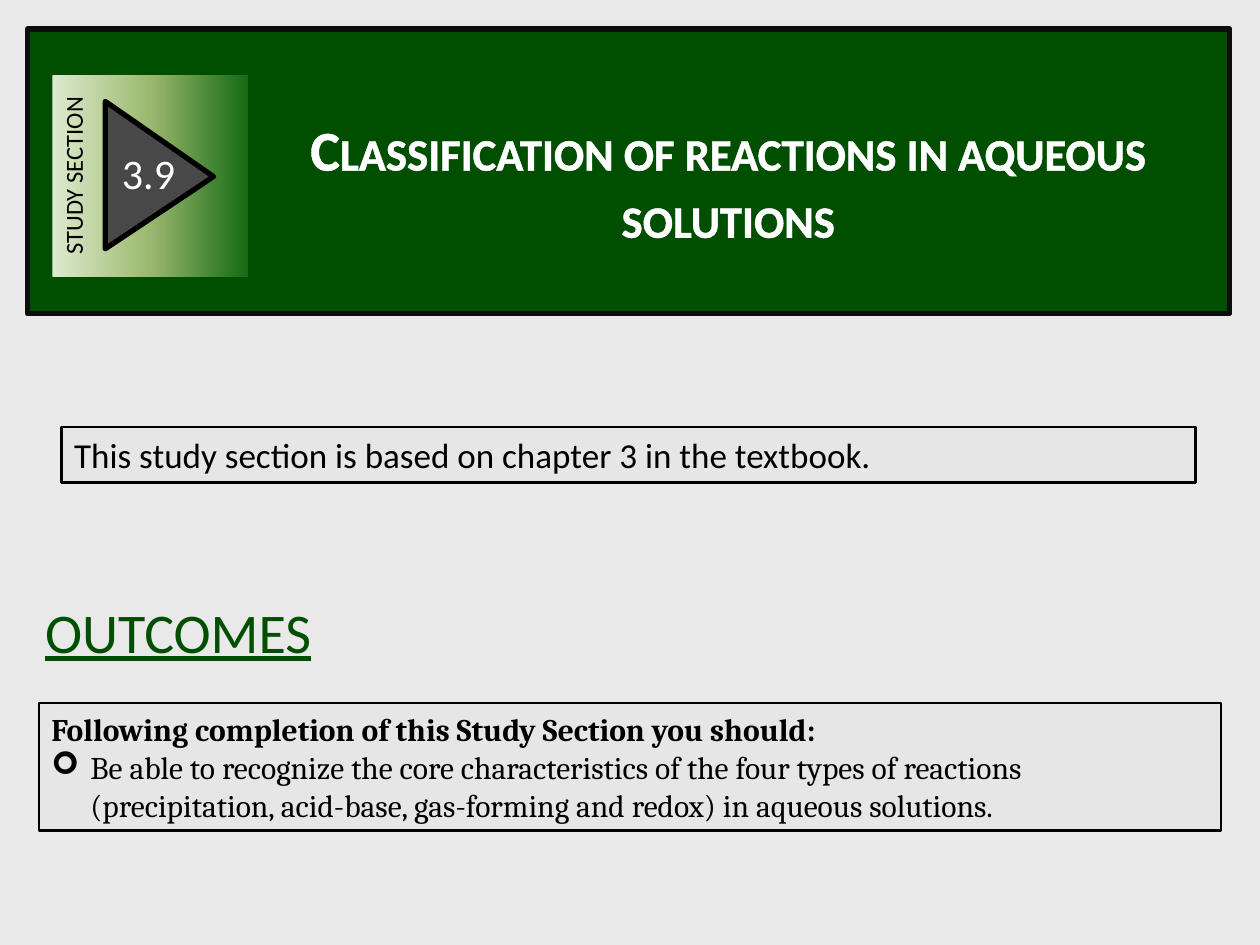
from lxml import etree
from pptx import Presentation
from pptx.dml.color import RGBColor
from pptx.enum.shapes import MSO_SHAPE
from pptx.enum.text import MSO_ANCHOR, MSO_AUTO_SIZE, PP_ALIGN
from pptx.oxml.ns import qn
from pptx.util import Inches, Pt

RECTANGLE = MSO_SHAPE.RECTANGLE
TRIANGLE = MSO_SHAPE.ISOSCELES_TRIANGLE
TOP, MIDDLE = MSO_ANCHOR.TOP, MSO_ANCHOR.MIDDLE
GROW = MSO_AUTO_SIZE.SHAPE_TO_FIT_TEXT
LEFT, CENTER = PP_ALIGN.LEFT, PP_ALIGN.CENTER

GREEN, BLACK, WHITE, PANEL = "004E00", "000000", "FFFFFF", "E6E6E6"
BADGE_STOPS = [(0, "DDEBCF"), (50, "9CB86E"), (100, "156B13")]


def color(hex_value):
    return RGBColor.from_string(hex_value)


def add_block(shapes, kind, box, fill=None, border=None, weight=0, rotation=0):
    block = shapes.add_shape(kind, *map(Inches, box))
    block.shadow.inherit = False
    block.rotation = rotation
    if fill:
        block.fill.solid()
        block.fill.fore_color.rgb = color(fill)
    if border:
        block.line.color.rgb = color(border)
        block.line.width = Pt(weight)
    else:
        block.line.fill.background()
    return block


def add_gradient(block, stops):
    block.fill.gradient()
    block.fill.gradient_angle = 270
    stop_list = block._element.spPr.find(qn("a:gradFill")).find(qn("a:gsLst"))
    for old_stop in list(stop_list):
        stop_list.remove(old_stop)
    for percent, shade in stops:
        stop = etree.SubElement(stop_list, qn("a:gs"), pos=str(percent * 1000))
        etree.SubElement(stop, qn("a:srgbClr"), val=shade)


def set_up_text(holder, anchor=TOP, wrap=True):
    frame = holder.text_frame
    settings = {"word_wrap": wrap, "auto_size": GROW, "vertical_anchor": anchor}
    for key, value in settings.items():
        setattr(frame, key, value)
    return frame


def write(paragraph, words, ink, size, font="Calibri", align=LEFT, **extras):
    paragraph.alignment = align
    run = paragraph.add_run()
    run.text = words
    run.font.color.rgb = color(ink)
    for key, value in {"name": font, "size": Pt(size), **extras}.items():
        setattr(run.font, key, value)
    return run


def add_label(shapes, box, words, ink, size, wrap=True, **extras):
    label = shapes.add_textbox(*map(Inches, box))
    frame = set_up_text(label, wrap=wrap)
    return write(frame.paragraphs[0], words, ink, size, **extras)


def outline_text(run, ink, weight):
    properties = run.font._element
    outline = etree.Element(qn("a:ln"), w=str(Pt(weight)))
    fill = etree.SubElement(outline, qn("a:solidFill"))
    etree.SubElement(fill, qn("a:srgbClr"), val=ink)
    properties.insert(0, outline)


def add_bullet(paragraph, symbol, indent):
    properties = paragraph._p.get_or_add_pPr()
    properties.set("marL", str(Inches(indent)))
    properties.set("indent", str(-Inches(indent)))
    etree.SubElement(properties, qn("a:buFont"), typeface="Wingdings")
    etree.SubElement(properties, qn("a:buChar"), char=symbol)


def add_banner(shapes):
    add_block(shapes, RECTANGLE, (0.22, 0.23, 9.54, 2.26), GREEN, "0D0D0D", 3)
    title = add_label(shapes, (2.11, 0.86, 7.34, 1.18),
                      "Classification of reactions in aqueous solutions",
                      WHITE, 32, align=CENTER, bold=True)
    title.font._element.set("cap", "small")
    outline_text(title, WHITE, 0.75)


def add_section_badge(shapes):
    badge = shapes.add_group_shape().shapes
    plate = add_block(badge, RECTANGLE, (0.39, 0.62, 1.6, 1.55), rotation=270)
    add_gradient(plate, BADGE_STOPS)
    write(set_up_text(plate).paragraphs[0], "STUDY SECTION", BLACK, 14, align=CENTER)
    arrow = add_block(badge, TRIANGLE, (0.68, 0.96, 1.17, 0.86),
                      "484848", BLACK, 3, rotation=90)
    arrow.adjustments[0] = 0.51
    add_label(badge, (0.87, 1.12, 0.63, 0.5), "3.9", WHITE, 24, wrap=False)


def add_panel(shapes, box):
    panel = add_block(shapes, RECTANGLE, box, PANEL, BLACK, 1.5)
    return set_up_text(panel, MIDDLE)


def add_outcomes(shapes):
    heading = add_label(shapes, (0.26, 4.69, 2.67, 0.64), "OUTCOMES",
                        GREEN, 32, underline=True)
    outline_text(heading, BLACK, 0.25)
    frame = add_panel(shapes, (0.31, 5.58, 9.38, 1.01))
    write(frame.paragraphs[0], "Following completion of this Study Section you should:",
          BLACK, 18, "Cambria", bold=True)
    outcome = frame.add_paragraph()
    write(outcome, "Be able to recognize the core characteristics of the four types "
          "of reactions (precipitation, acid-base, gas-forming and redox) in aqueous "
          "solutions.", BLACK, 18, "Cambria", bold=False)
    add_bullet(outcome, "➢", 0.31)


def add_textbook_note(shapes):
    frame = add_panel(shapes, (0.49, 3.39, 9, 0.44))
    write(frame.paragraphs[0],
          "This study section is based on chapter 3 in the textbook.", BLACK, 20)


def main():
    deck = Presentation()
    deck.slide_width, deck.slide_height = Inches(10), Inches(7.5)
    slide = deck.slides.add_slide(deck.slide_layouts[6])
    slide.background.fill.solid()
    slide.background.fill.fore_color.rgb = color("E9E9E9")
    add_banner(slide.shapes)
    add_section_badge(slide.shapes)
    add_outcomes(slide.shapes)
    add_textbook_note(slide.shapes)
    deck.save("out.pptx")


if __name__ == "__main__":
    main()
